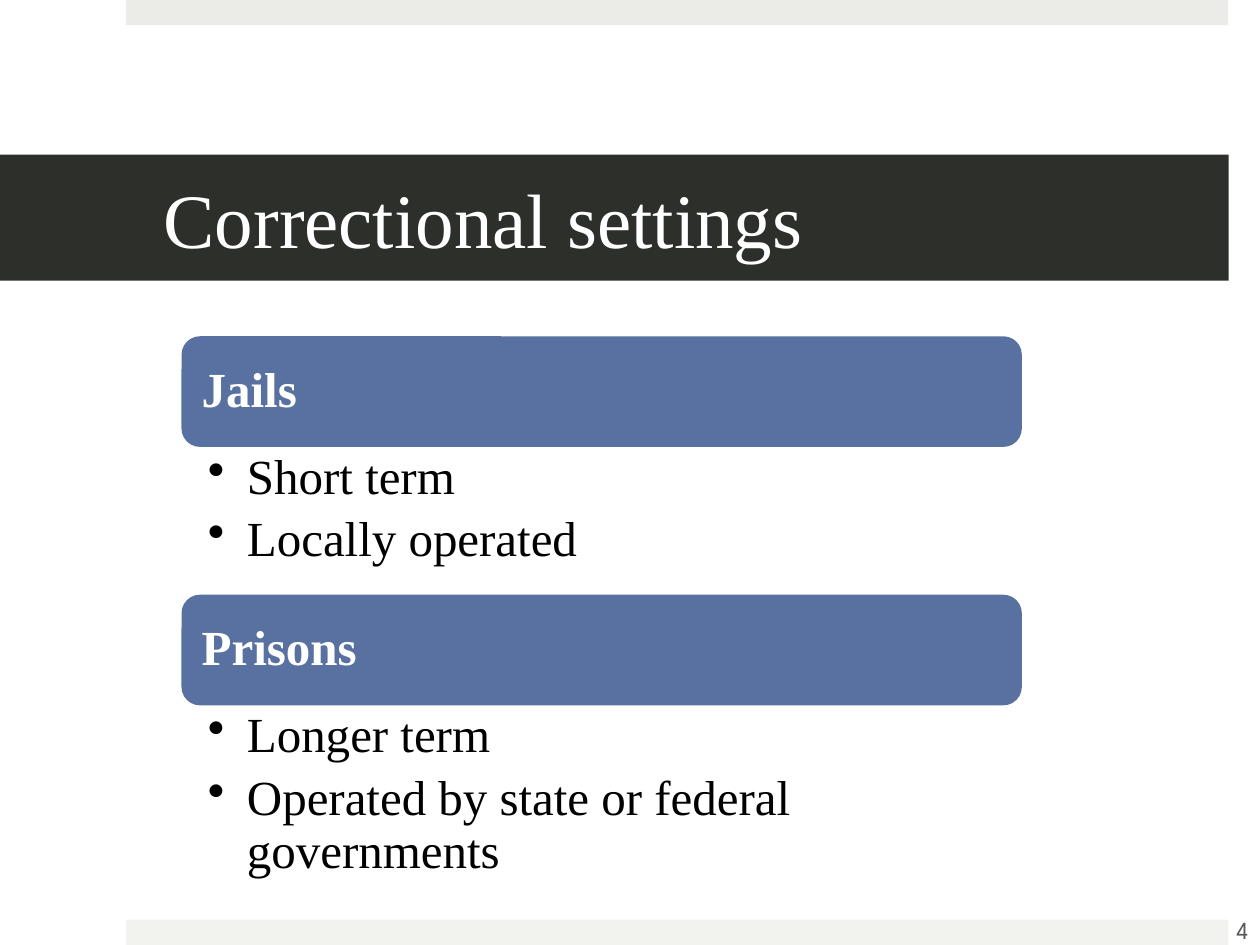
from pptx import Presentation
from pptx.dml.color import RGBColor
from pptx.enum.shapes import MSO_SHAPE
from pptx.enum.text import MSO_ANCHOR, PP_ALIGN
from pptx.oxml.ns import qn
from pptx.util import Cm, Pt
from lxml import etree

WHITE = RGBColor(0xFF, 0xFF, 0xFF)
BLACK = RGBColor(0, 0, 0)
DARK = RGBColor(0x2D, 0x2F, 0x2B)
BLUE = RGBColor(0x59, 0x71, 0xA1)
TOP = RGBColor(0xEB, 0xEB, 0xE7)
FOOT = RGBColor(0xF2, 0xF2, 0xEF)
GREY = RGBColor(0x59, 0x59, 0x59)
SERIF = "Times New Roman"

deck = Presentation()
deck.slide_width, deck.slide_height = Cm(25.4), Cm(19.05)
slide = deck.slides.add_slide(deck.slide_layouts[6])


def block(kind, x, y, w, h, fill):
    item = slide.shapes.add_shape(kind, Cm(x), Cm(y), Cm(w), Cm(h))
    item.shadow.inherit = False
    item.fill.solid()
    item.fill.fore_color.rgb = fill
    item.line.fill.background()
    return item


def write(frame, lines, size, color, pads, font=SERIF, bold=False,
          anchor=MSO_ANCHOR.MIDDLE, align=PP_ALIGN.LEFT):
    """Fill a text frame, one paragraph a line; pads are left, top, right, bottom in cm."""
    frame.word_wrap = True
    frame.vertical_anchor = anchor
    frame.margin_left, frame.margin_top, frame.margin_right, frame.margin_bottom = map(Cm, pads)
    for i, line in enumerate(lines):
        para = frame.paragraphs[0] if i == 0 else frame.add_paragraph()
        para.alignment = align
        run = para.add_run()
        run.text = line
        run.font.name = font
        run.font.size = Pt(size)
        run.font.bold = bold
        run.font.color.rgb = color


# Bands and title
block(MSO_SHAPE.RECTANGLE, 2.54, 0, 22.22, 0.51, TOP)
block(MSO_SHAPE.RECTANGLE, 2.54, 18.54, 22.22, 0.51, FOOT)
title = block(MSO_SHAPE.RECTANGLE, 0, 3.12, 24.77, 2.54, DARK)
write(title.text_frame, ["Correctional settings"], 44, WHITE, (3.3, 0.13, 0.76, 0.13))

# Each setting: a heading bar with its bullets below
LEFT, WIDTH, BAR = 3.66, 16.94, 2.23
groups = [
    (6.78, 3.0, "Jails", ["Short term", "Locally operated"]),
    (11.99, 3.45, "Prisons", ["Longer term", "Operated by state or federal governments"]),
]
for y, high, name, facts in groups:
    bar = block(MSO_SHAPE.ROUNDED_RECTANGLE, LEFT, y, WIDTH, BAR, BLUE)
    write(bar.text_frame, [name], 28, WHITE, (0.3, 0.3, 0.3, 0.3), bold=True)
    bar.text_frame.paragraphs[0].line_spacing = 0.9

    body = slide.shapes.add_textbox(Cm(LEFT), Cm(y + BAR), Cm(WIDTH), Cm(high))
    write(body.text_frame, facts, 28, BLACK, (0.53, 0.1, 0.56, 0.1), anchor=MSO_ANCHOR.TOP)
    for para in body.text_frame.paragraphs:
        para.line_spacing = 0.9
        para.space_after = Pt(5.6)
        props = para._p.get_or_add_pPr()
        props.set("marL", str(Cm(0.79)))
        props.set("indent", str(-Cm(0.79)))
        etree.SubElement(props, qn("a:buChar")).set("char", "•")

# Slide number
num = slide.shapes.add_textbox(Cm(24.41), Cm(18.24), Cm(1.27), Cm(1.02))
write(num.text_frame, ["4"], 14, GREY, (0.25, 0.13, 0.25, 0.13),
      font="League Spartan", align=PP_ALIGN.CENTER)

deck.save("out.pptx")
